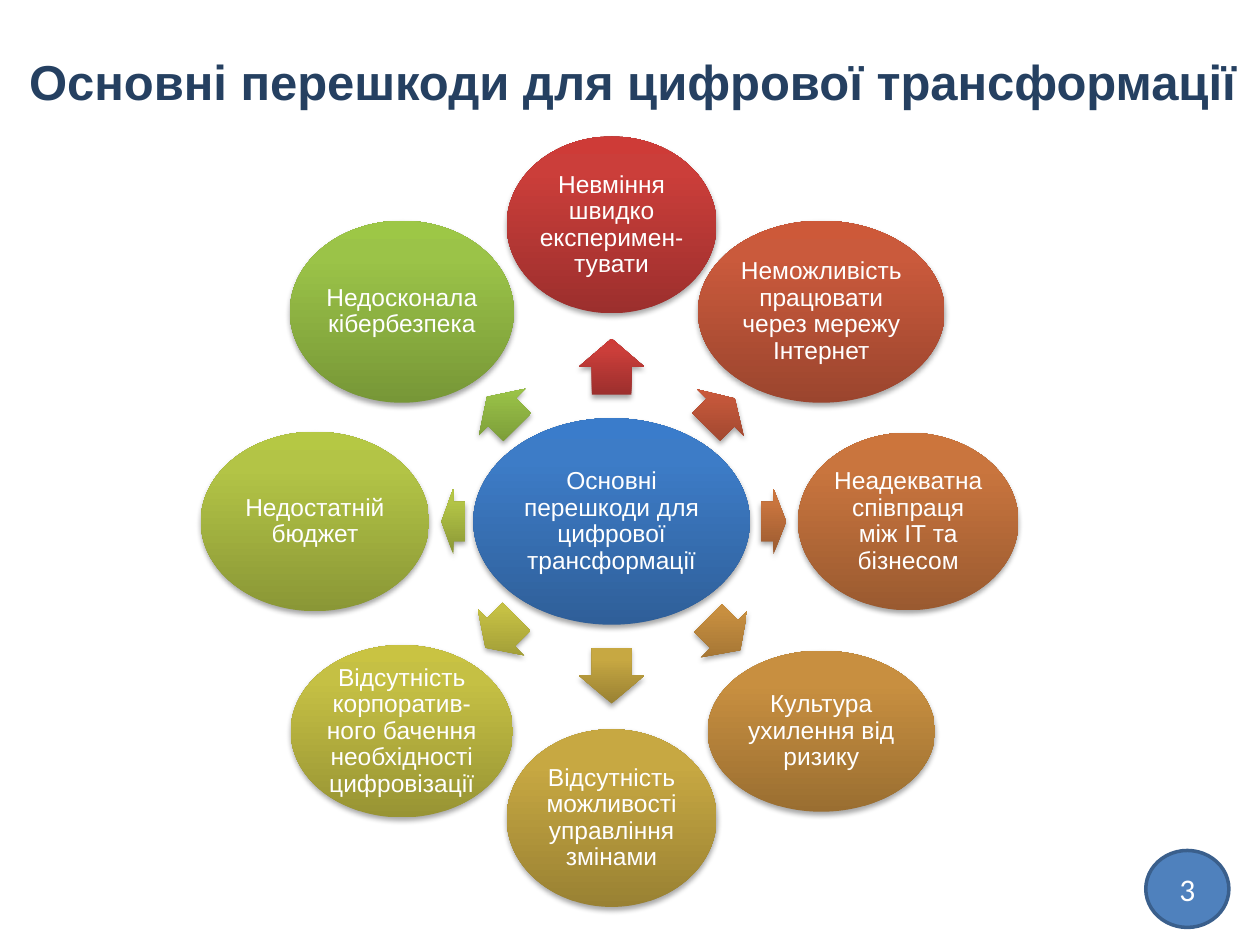
from dataclasses import dataclass
from math import cos, radians, sin

from lxml import etree
from pptx import Presentation
from pptx import util as u
from pptx.dml.color import RGBColor
from pptx.enum import shapes, text
from pptx.oxml.ns import qn


@dataclass(frozen=True)
class Theme:
    font: str = "Arial"
    number_font: str = "Calibri"
    title_size: float = 28
    node_size: float = 14
    number_size: float = 18
    title: str = "254061"
    light: str = "FFFFFF"
    badge: str = "4F81BD"
    badge_line: str = "3A5F8C"
    # Gradient stops from bottom to top: 0 %, 80 %, 100 %
    hub: tuple = ("2F5F99", "3D7CC7", "3A7CCB")
    red: tuple = ("9C2F2D", "CB3E3A", "CE3B37")
    brick: tuple = ("9B452E", "CA5A3C", "CD5939")
    orange: tuple = ("9A5A30", "C9753E", "CC753C")
    amber: tuple = ("9A6E31", "C88F40", "CB903E")
    gold: tuple = ("998133", "C7A842", "CAAA40")
    olive: tuple = ("989434", "C5C044", "C9C342")
    lime: tuple = ("8A9736", "B3C446", "B5C844")
    green: tuple = ("779737", "9BC348", "9DC746")


class SlideBuilder:
    def __init__(self, slide, theme):
        self.slide = slide
        self.theme = theme

    def _write(self, tf, words, size, color, font, bold=False, spacing=None):
        tf.word_wrap = True
        p = tf.paragraphs[0]
        p.alignment = text.PP_ALIGN.CENTER
        p.line_spacing = spacing
        r = p.add_run()
        r.text = words
        r.font.size = u.Pt(size)
        r.font.name = font
        r.font.bold = bold
        r.font.color.rgb = RGBColor.from_string(color)

    def _shape(self, kind, cx, cy, w, h):
        """Add a preset shape centred on (cx, cy)."""
        sp = self.slide.shapes.add_shape(
            kind, u.Pt(cx - w / 2), u.Pt(cy - h / 2), u.Pt(w), u.Pt(h))
        sp.shadow.inherit = False
        return sp

    def _shade(self, sp, colors):
        """Give a shape an upright gradient, no line and a soft shadow."""
        sp.line.fill.background()
        sp.fill.gradient()
        grad = sp._element.spPr.find(qn("a:gradFill"))
        grad.set("rotWithShape", "0")
        for child in list(grad):
            grad.remove(child)
        stops = etree.SubElement(grad, qn("a:gsLst"))
        for pos, color in zip((0, 80000, 100000), colors):
            gs = etree.SubElement(stops, qn("a:gs"), pos=str(pos))
            etree.SubElement(gs, qn("a:srgbClr"), val=color)
        etree.SubElement(grad, qn("a:lin"), ang="16200000", scaled="0")

        effects = sp._element.spPr.find(qn("a:effectLst"))
        shadow = etree.SubElement(
            effects, qn("a:outerShdw"), blurRad=str(u.Pt(3.1)),
            dist=str(u.Pt(1.8)), dir="5400000", rotWithShape="0")
        black = etree.SubElement(shadow, qn("a:srgbClr"), val="000000")
        etree.SubElement(black, qn("a:alpha"), val="35000")

    def title(self, words, x, y, w, h):
        box = self.slide.shapes.add_textbox(u.Pt(x), u.Pt(y), u.Pt(w), u.Pt(h))
        t = self.theme
        self._write(box.text_frame, words, t.title_size, t.title, t.font, bold=True)

    def node(self, words, cx, cy, w, h, colors):
        sp = self._shape(shapes.MSO_SHAPE.OVAL, cx, cy, w, h)
        self._shade(sp, colors)
        tf = sp.text_frame
        tf.margin_left = tf.margin_right = u.Pt(1.4)
        tf.margin_top = tf.margin_bottom = u.Pt(1.4)
        tf.vertical_anchor = text.MSO_ANCHOR.MIDDLE
        t = self.theme
        self._write(tf, words, t.node_size, t.light, t.font, spacing=0.9)

    def arrow(self, cx, cy, length, breadth, angle, colors):
        sp = self._shape(shapes.MSO_SHAPE.RIGHT_ARROW, cx, cy, length, breadth)
        sp.adjustments[0] = 0.6
        sp.adjustments[1] = 0.5
        sp.rotation = angle
        self._shade(sp, colors)

    def badge(self, words, cx, cy, w, h):
        t = self.theme
        sp = self._shape(shapes.MSO_SHAPE.OVAL, cx, cy, w, h)
        sp.fill.solid()
        sp.fill.fore_color.rgb = RGBColor.from_string(t.badge)
        sp.line.color.rgb = RGBColor.from_string(t.badge_line)
        sp.line.width = u.Pt(2)
        sp.text_frame.vertical_anchor = text.MSO_ANCHOR.MIDDLE
        self._write(sp.text_frame, words, t.number_size, t.light, t.number_font)


HUB_X, HUB_Y = 349.5, 298
RING_RADIUS = 169.5
ARROW_BREADTH = 37.5
TOPIC = "Основні перешкоди для цифрової трансформації"


def polar(radius, angle):
    a = radians(angle)
    return HUB_X + radius * cos(a), HUB_Y + radius * sin(a)


def main():
    theme = Theme()
    prs = Presentation()
    prs.slide_width, prs.slide_height = u.Pt(720), u.Pt(540)
    s = SlideBuilder(prs.slides.add_slide(prs.slide_layouts[6]), theme)

    s.title(TOPIC, 1.5, 26, 720, 41)
    s.node(TOPIC, HUB_X, HUB_Y, 158, 118, theme.hub)

    # Clockwise from the top: words, node size, arrow length and radius, colours
    obstacles = [
        ("Невміння швидко експеримен-тувати", 120, 101, 32, 88.5, theme.red),
        ("Неможливість працювати через мережу Інтернет",
         141, 104, 23, 88, theme.brick),
        ("Неадекватна співпраця між ІТ та бізнесом",
         126, 101.5, 14.5, 92.5, theme.orange),
        ("Культура ухилення від ризику", 130, 92, 26, 91, theme.amber),
        ("Відсутність можливості управління змінами",
         120, 101.5, 32, 88, theme.gold),
        ("Відсутність корпоратив-ного бачення необхідності цифровізації",
         127, 98.5, 25, 89.5, theme.olive),
        ("Недостатній бюджет", 130.5, 102.5, 13.5, 90.5, theme.lime),
        ("Недосконала кібербезпека", 128, 104, 24.5, 88.5, theme.green),
    ]
    step = 360 / len(obstacles)
    for i, (words, w, h, length, radius, colors) in enumerate(obstacles):
        angle = (270 + i * step) % 360
        s.arrow(*polar(radius, angle), length, ARROW_BREADTH, angle, colors)
        s.node(words, *polar(RING_RADIUS, angle), w, h, colors)

    s.badge("3", 678.5, 508, 47.5, 44)
    prs.save("out.pptx")


if __name__ == "__main__":
    main()
